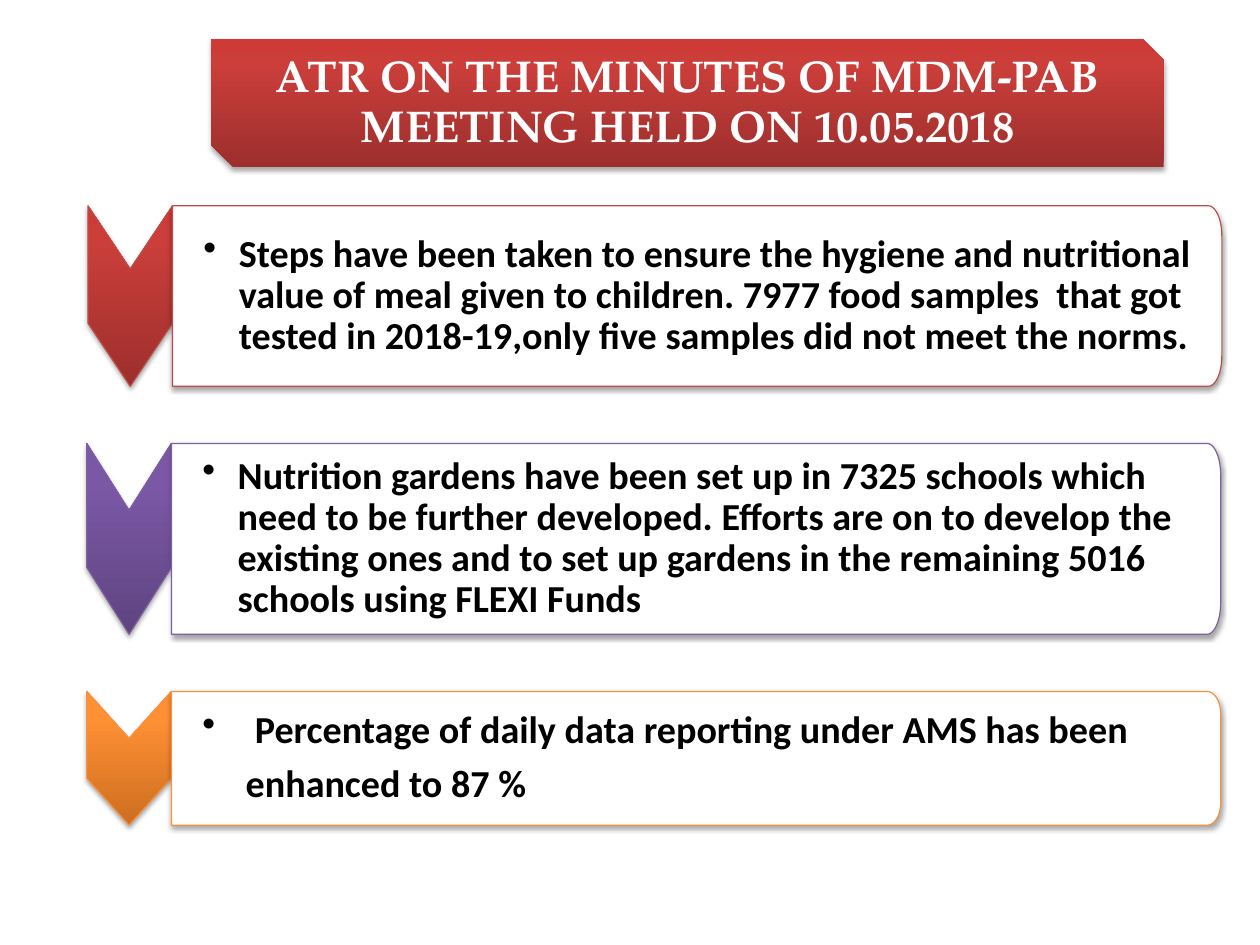
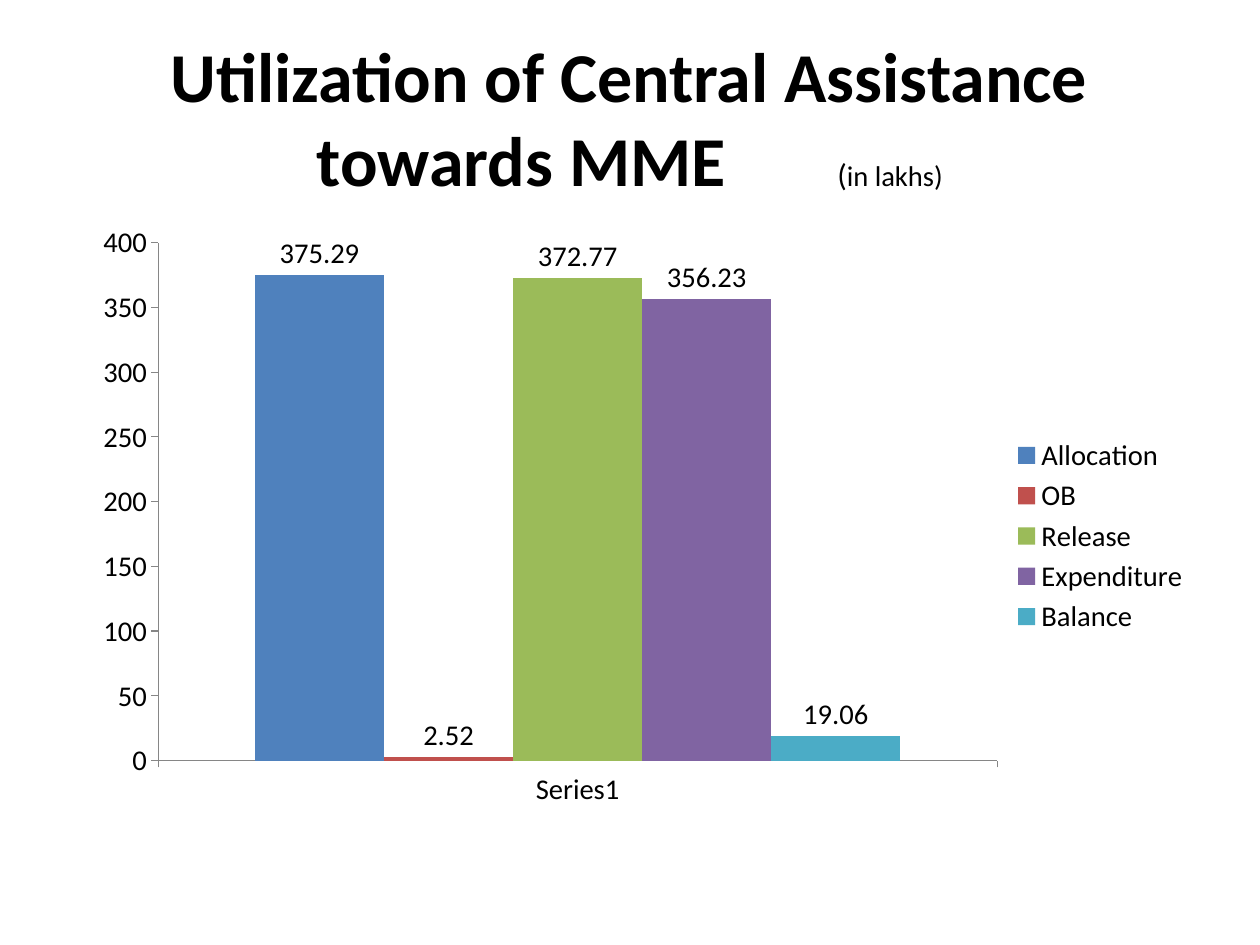
import math
from dataclasses import dataclass

import pptx
import pptx.chart.data
import pptx.dml.color
import pptx.enum.chart
import pptx.enum.shapes
import pptx.enum.text
import pptx.oxml
import pptx.oxml.ns
import pptx.util

Inches = pptx.util.Inches
Pt = pptx.util.Pt
qn = pptx.oxml.ns.qn
ALIGN = pptx.enum.text.PP_ALIGN
ANCHOR = pptx.enum.text.MSO_ANCHOR
NS = pptx.oxml.ns.nsdecls("a")

COLORS = {"text": "000000", "paper": "FFFFFF", "axis": "868686",
          "red_line": "BF4C48", "purple_line": "7D60A0", "orange_line": "F69240"}
GRADIENTS = {"red": ("9C2F2D", "CB3E3A", "CE3B37"),
             "purple": ("5F4480", "7B58A6", "7C57A8"),
             "orange": ("CC6E20", "FF9034", "FF9136")}
GRADIENT_STOPS = (0, 80, 100)
BODY_FONT = "Calibri"
TITLE_FONT = "TeX Gyre Pagella"

CM_PER_INCH = 2.54
SLIDE_CM = (28, 21)
CHEVRON_WIDTH, PANEL_WIDTH = 0.74, 9.18
FIRST_TOP, ROW_GAP = 1.8, 0.5


@dataclass
class Para:
    text: str
    margin: float = 0.31
    bullet: bool = True


@dataclass
class Row:
    color: str
    left: float
    height: float
    space_after: float
    paras: list[Para]


@dataclass
class TitleRun:
    text: str
    size: float
    bold: bool = True
    spacing: float = 0


@dataclass
class Bar:
    name: str
    value: float
    color: str


ROWS = [
    Row("red", 0.77, 1.58, 4, [Para(
        "Steps have been taken to ensure the hygiene and nutritional value of meal "
        "given to children. 7977 food samples  that got tested in 2018-19,only five "
        "samples did not meet the norms.")]),
    Row("purple", 0.76, 1.67, 4, [Para(
        "Nutrition gardens have been set up in 7325 schools which need to be further "
        "developed. Efforts are on to develop the existing ones and to set up gardens "
        "in the remaining 5016 schools using FLEXI Funds")]),
    Row("orange", 0.76, 1.17, 8.4, [
        Para("Percentage of daily data reporting under AMS has been", 0.46),
        Para("enhanced to 87 %", 0.38, bullet=False)]),
]

BARS = [Bar("Allocation", 375.29, "4F81BD"), Bar("OB", 2.52, "C0504D"),
        Bar("Release", 372.77, "9BBB59"), Bar("Expenditure", 356.23, "8064A2"),
        Bar("Balance", 19.06, "4BACC6")]


def rgb(value: str) -> pptx.dml.color.RGBColor:
    return pptx.dml.color.RGBColor.from_string(value)


def set_font(font, size: float, color: str, bold: bool = False, name: str = BODY_FONT) -> None:
    font.size = Pt(size)
    font.name = name
    font.bold = bold
    font.color.rgb = rgb(color)


def add_shadow(sp) -> None:
    sp.shadow.inherit = False
    sp._element.spPr.find(qn("a:effectLst")).append(pptx.oxml.parse_xml(
        f'<a:outerShdw {NS} blurRad="40000" dist="23000" dir="5400000" rotWithShape="0">'
        '<a:srgbClr val="000000"><a:alpha val="35000"/></a:srgbClr></a:outerShdw>'))


def fill_gradient(sp, name: str) -> None:
    """Fill from the dark foot of the shape up to its light head."""
    sp.fill.gradient()
    sp.fill.gradient_angle = 90
    stops = sp._element.spPr.find(qn("a:gradFill")).find(qn("a:gsLst"))
    for stop in list(stops):
        stops.remove(stop)
    for pos, color in zip(GRADIENT_STOPS, GRADIENTS[name]):
        stops.append(pptx.oxml.parse_xml(
            f'<a:gs {NS} pos="{pos * 1000}"><a:srgbClr val="{color}"/></a:gs>'))


def set_frame(tf, left: float, right: float) -> None:
    tf.word_wrap = True
    tf.auto_size = pptx.enum.text.MSO_AUTO_SIZE.NONE
    tf.vertical_anchor = ANCHOR.MIDDLE
    tf.margin_left, tf.margin_right = Inches(left), Inches(right)
    tf.margin_top = tf.margin_bottom = Inches(0.06)


def place_title(slide, box: tuple, runs: list[TitleRun], color: str, font: str,
                line_spacing: float = 1.0):
    title = slide.shapes.title
    title.left, title.top, title.width, title.height = map(Inches, box)
    set_frame(title.text_frame, 0.11, 0.11)
    p = title.text_frame.paragraphs[0]
    p.alignment = ALIGN.CENTER
    p.line_spacing = line_spacing
    for run in runs:
        r = p.add_run()
        r.text = run.text
        set_font(r.font, run.size, color, run.bold, font)
        if run.spacing:
            r._r.get_or_add_rPr().set("spc", str(int(run.spacing * 100)))
    return title


def add_polygon(shapes, points: list[tuple[float, float]], line: str):
    emu = [(Inches(x), Inches(y)) for x, y in points]
    builder = shapes.build_freeform(*emu[0], scale=1.0)
    builder.add_line_segments(emu[1:], close=True)
    sp = builder.convert_to_shape()
    sp.line.color.rgb = rgb(line)
    sp.line.width = Pt(0.75)
    add_shadow(sp)
    return sp


def chevron_points(left: float, top: float, height: float) -> list[tuple[float, float]]:
    right = left + CHEVRON_WIDTH
    mid = (left + right) / 2
    shoulder, notch = top + 0.65 * height, top + 0.35 * height
    return [(right, top), (right, shoulder), (mid, top + height),
            (left, shoulder), (left, top), (mid, notch)]


def panel_points(left: float, top: float, height: float) -> list[tuple[float, float]]:
    """Rectangle whose two right corners are elliptical arcs."""
    right, bottom = left + PANEL_WIDTH, top + height
    rx, ry, steps = 0.12, height / 6, 12
    arc = [(rx * (1 - math.sin(a)), ry * (1 - math.cos(a)))
           for a in (math.pi / 2 * i / steps for i in range(steps + 1))]
    upper = [(right - dx, top + dy) for dx, dy in arc]
    lower = [(right - dx, bottom - dy) for dx, dy in reversed(arc)]
    return [(left, top), *upper, *lower, (left, bottom)]


def write_para(p, para: Para, space_after: float) -> None:
    pPr = p._p.get_or_add_pPr()
    pPr.set("marL", str(Inches(para.margin)))
    pPr.set("indent", str(-Inches(para.margin) if para.bullet else 0))
    if para.bullet:
        for xml in (f'<a:buClr {NS}><a:srgbClr val="{COLORS["text"]}"/></a:buClr>',
                    f'<a:buChar {NS} char="•"/>'):
            pPr.append(pptx.oxml.parse_xml(xml))
    p.alignment = ALIGN.LEFT
    p.line_spacing = 0.9
    p.space_after = Pt(space_after)
    r = p.add_run()
    r.text = para.text
    set_font(r.font, 24, COLORS["text"], bold=True)


def add_row(slide, row: Row, top: float) -> None:
    shapes = slide.shapes.add_group_shape().shapes
    line = COLORS[f"{row.color}_line"]
    chevron = add_polygon(shapes, chevron_points(row.left, top, row.height), line)
    fill_gradient(chevron, row.color)

    panel_left = row.left + CHEVRON_WIDTH
    panel = add_polygon(shapes, panel_points(panel_left, top, row.height), line)
    panel.fill.solid()
    panel.fill.fore_color.rgb = rgb(COLORS["paper"])
    tf = panel.text_frame
    set_frame(tf, 0.27, 0.06)
    for i, para in enumerate(row.paras):
        write_para(tf.add_paragraph() if i else tf.paragraphs[0], para, row.space_after)


def build_minutes(slide) -> None:
    box = (1.85, 0.34, 8.33, 1.12)
    banner = slide.shapes.add_shape(
        pptx.enum.shapes.MSO_SHAPE.SNIP_2_DIAG_RECTANGLE, *map(Inches, box))
    fill_gradient(banner, "red")
    banner.line.fill.background()
    add_shadow(banner)
    title = place_title(
        slide, box, [TitleRun("ATR ON THE MINUTES OF MDM-PAB MEETING HELD ON 10.05.2018", 28)],
        COLORS["paper"], TITLE_FONT, 0.93)
    banner._element.addnext(title._element)

    top = FIRST_TOP
    for row in ROWS:
        add_row(slide, row, top)
        top += row.height + ROW_GAP


def set_plot_layout(chart, x: float, y: float, w: float, h: float) -> None:
    area = chart._chartSpace.chart.plotArea
    for layout in area.findall(qn("c:layout")):
        area.remove(layout)
    sizes = "".join(f'<c:{tag} val="{val}"/>' for tag, val in zip("xywh", (x, y, w, h)))
    area.insert(0, pptx.oxml.parse_xml(
        f'<c:layout {pptx.oxml.ns.nsdecls("c")}><c:manualLayout>'
        '<c:layoutTarget val="inner"/><c:xMode val="edge"/><c:yMode val="edge"/>'
        f'{sizes}</c:manualLayout></c:layout>'))


def build_utilization(slide) -> None:
    place_title(slide, (0.55, 0.33, 9.92, 1.38), [
        TitleRun("Utilization of Central Assistance towards MME", 44.1),
        TitleRun(" ", 44.1, spacing=60),
        TitleRun("(", 19.8, bold=False),
        TitleRun("in lakhs)", 18, bold=False)], COLORS["text"], BODY_FONT)

    data = pptx.chart.data.CategoryChartData()
    data.categories = ["Series1"]
    for bar in BARS:
        data.add_series(bar.name, [bar.value])
    chart = slide.shapes.add_chart(
        pptx.enum.chart.XL_CHART_TYPE.COLUMN_CLUSTERED,
        *map(Inches, (0.59, 1.96, 9.92, 5.46)), data).chart
    set_font(chart.font, 18, COLORS["text"])
    chart.has_title = False
    chart.has_legend = True
    chart.legend.position = pptx.enum.chart.XL_LEGEND_POSITION.RIGHT
    chart.legend.include_in_layout = False
    set_plot_layout(chart, 0.08, 0.03, 0.74, 0.83)

    for axis in (chart.category_axis, chart.value_axis):
        axis.has_major_gridlines = False
        axis.major_tick_mark = pptx.enum.chart.XL_TICK_MARK.OUTSIDE
        axis.format.line.color.rgb = rgb(COLORS["axis"])
    chart.value_axis.minimum_scale = 0
    chart.value_axis.maximum_scale = 400
    chart.value_axis.major_unit = 50

    plot = chart.plots[0]
    plot.vary_by_categories = False
    plot.gap_width = 150
    plot.overlap = 0
    for series, bar in zip(plot.series, BARS):
        series.format.fill.solid()
        series.format.fill.fore_color.rgb = rgb(bar.color)
        series.data_labels.show_value = True
        series.data_labels.position = pptx.enum.chart.XL_LABEL_POSITION.OUTSIDE_END


def main() -> None:
    prs = pptx.Presentation()
    prs.slide_width, prs.slide_height = (Inches(cm / CM_PER_INCH) for cm in SLIDE_CM)
    title_only = prs.slide_layouts[5]
    for build in (build_minutes, build_utilization):
        build(prs.slides.add_slide(title_only))
    prs.save("out.pptx")


if __name__ == "__main__":
    main()
